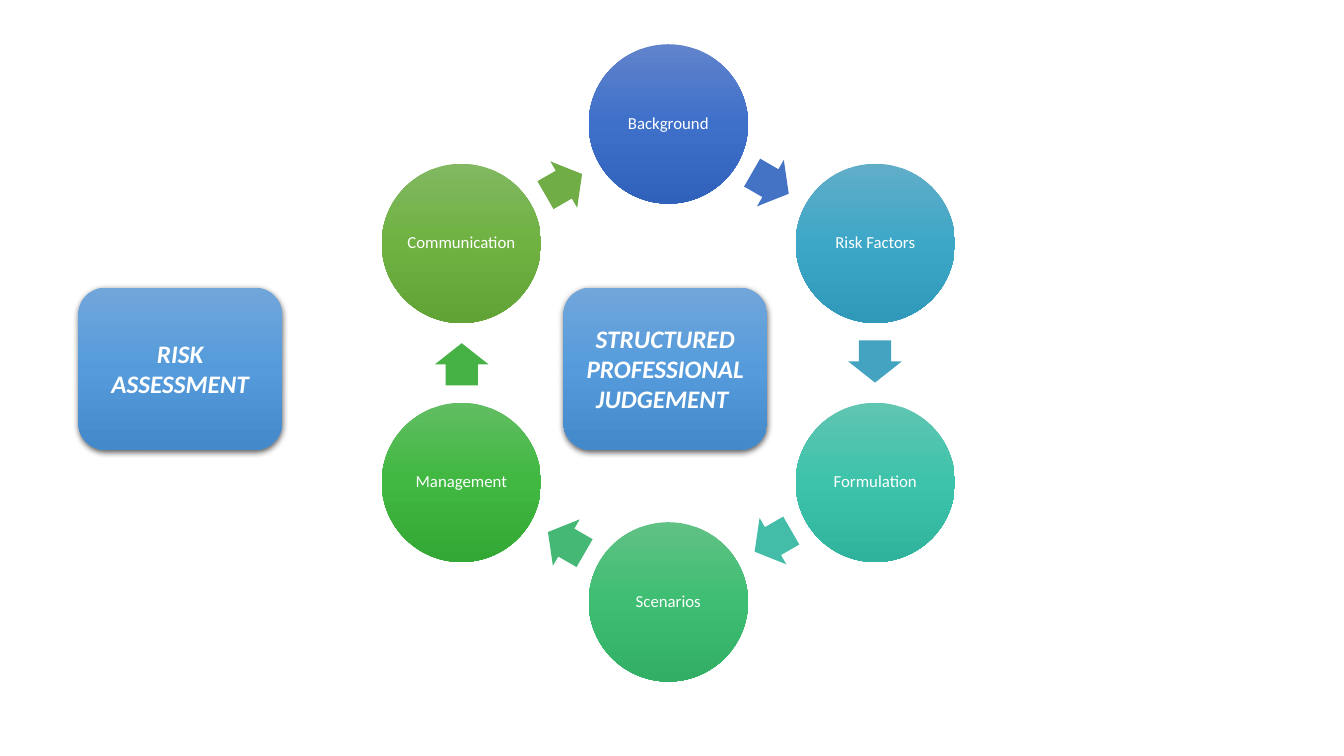
import math
from lxml import etree
from pptx import Presentation
from pptx import util as u
from pptx.dml.color import RGBColor
from pptx.enum import shapes, text
from pptx.oxml import ns

THEME = {
    "font": "Calibri",
    "text": "FFFFFF",
    "shadow": "000000",
    "panel": ("71A6DB", "559BDB", "448ACA"),
    "step_size": 12,
    "panel_size": 18,
}

STEPS = [
    ("Background", ("6183CB", "3E70CA", "3062BB"), "4472C4"),
    ("Risk Factors", ("61ADC8", "3DA7C7", "3098B8"), "44A3C0"),
    ("Formulation", ("60C5B1", "3DC3AB", "30B39C"), "43BDA7"),
    ("Scenarios", ("60C184", "3EBE73", "32AE65"), "44B874"),
    ("Management", ("61BD61", "40B841", "34A835"), "46B246"),
    ("Communication", ("81B861", "6FB242", "62A336"), "70AD47"),
]
PANELS = [("STRUCTURED PROFESSIONAL JUDGEMENT ", 402.5), ("RISK ASSESSMENT", 56)]

CENTER_X, CENTER_Y = 477.4, 259.2
STEP_RADIUS, ARROW_RADIUS = 170.7, 147.6
STEP_SIZE = 113.8
ARROW_WIDTH, ARROW_HEIGHT = 30.2, 38.3
ARROW_LAG = 0.4
TURN = 360 / len(STEPS)

deck = Presentation()
deck.slide_width, deck.slide_height = u.Pt(960), u.Pt(540)
page = deck.slides.add_slide(deck.slide_layouts[6])


def add_block(kind, left, top, width, height, colours):
    block = page.shapes.add_shape(kind, u.Pt(left), u.Pt(top), u.Pt(width), u.Pt(height))
    block.shadow.inherit = False
    block.line.fill.background()
    if len(colours) == 1:
        block.fill.solid()
        block.fill.fore_color.rgb = RGBColor.from_string(colours[0])
        return block
    block.fill.gradient()
    block.fill.gradient_angle = 270
    stops = block._element.spPr.find(".//" + ns.qn("a:gsLst"))
    for stop in list(stops):
        stops.remove(stop)
    for position, colour in zip((0, 50000, 100000), colours):
        stop = etree.SubElement(stops, ns.qn("a:gs"), pos=str(position))
        etree.SubElement(stop, ns.qn("a:srgbClr"), val=colour)
    return block


def write(block, words, inset, spacing, **font_values):
    frame = block.text_frame
    frame_values = {"word_wrap": True, "vertical_anchor": text.MSO_ANCHOR.MIDDLE}
    if inset is not None:
        for side in ("left", "top", "right", "bottom"):
            frame_values[f"margin_{side}"] = u.Pt(inset)
    para = frame.paragraphs[0]
    span = para.add_run()
    span.text = words
    span.font.color.rgb = RGBColor.from_string(THEME["text"])
    para_values = {"alignment": text.PP_ALIGN.CENTER, "line_spacing": spacing}
    font_values["name"] = THEME["font"]
    for target, values in ((frame, frame_values), (para, para_values), (span.font, font_values)):
        for name, value in values.items():
            setattr(target, name, value)


for index, (label, shades, arrow_colour) in enumerate(STEPS):
    angle = math.radians(index * TURN)
    x = CENTER_X + STEP_RADIUS * math.sin(angle)
    y = CENTER_Y - STEP_RADIUS * math.cos(angle)
    step = add_block(shapes.MSO_SHAPE.OVAL, x - STEP_SIZE / 2, y - STEP_SIZE / 2,
                     STEP_SIZE, STEP_SIZE, shades)
    write(step, label, 1, 0.9, size=u.Pt(THEME["step_size"]))

    heading = (index + 0.5) * TURN
    angle = math.radians(heading - ARROW_LAG)
    x = CENTER_X + ARROW_RADIUS * math.sin(angle)
    y = CENTER_Y - ARROW_RADIUS * math.cos(angle)
    arrow = add_block(shapes.MSO_SHAPE.RIGHT_ARROW, x - ARROW_WIDTH / 2, y - ARROW_HEIGHT / 2,
                      ARROW_WIDTH, ARROW_HEIGHT, (arrow_colour,))
    arrow.rotation = heading
    arrow.adjustments[0], arrow.adjustments[1] = 0.6, 0.5

for label, left in PANELS:
    panel = add_block(shapes.MSO_SHAPE.ROUNDED_RECTANGLE, left, 205.4, 145.4, 115.9, THEME["panel"])
    write(panel, label, None, 1.0, size=u.Pt(THEME["panel_size"]), bold=True, italic=True)
    effects = panel._element.spPr.find(ns.qn("a:effectLst"))
    shadow = etree.SubElement(effects, ns.qn("a:outerShdw"), blurRad=str(u.Pt(4.5)),
                              dist=str(u.Pt(1.5)), dir="5400000", algn="ctr", rotWithShape="0")
    tint = etree.SubElement(shadow, ns.qn("a:srgbClr"), val=THEME["shadow"])
    etree.SubElement(tint, ns.qn("a:alpha"), val="63000")

deck.save("out.pptx")
